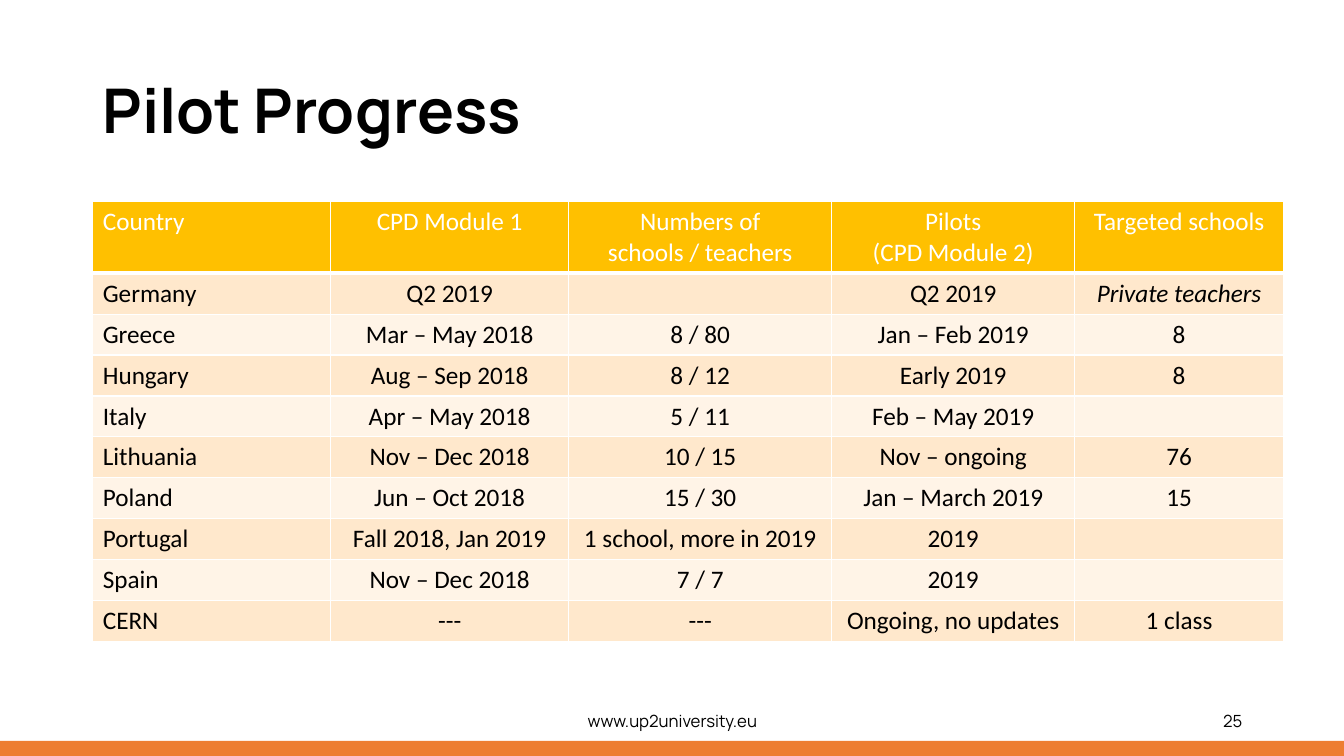
import pptx
import pptx.util
import pptx.dml.color
import pptx.enum.shapes
import pptx.enum.text
import pptx.oxml

Inch, Pt = pptx.util.Inches, pptx.util.Pt
Color = pptx.dml.color.RGBColor.from_string
Align, Anchor = pptx.enum.text.PP_ALIGN, pptx.enum.text.MSO_ANCHOR

theme = dict(
    ink="000000", white="FFFFFF", bar="ED7D31", head="FFC000",
    bands=("FFE8CC", "FFF4E7"),
    brand="Manrope", plain="Calibri",
    title=44, body=18, foot=12, rule=1, thick=3,
)
wide, high = 13.33, 7.5
left = 0.92


def write(frame, text, font=theme["brand"], size=theme["foot"], color=theme["ink"],
          bold=False, slant=False, align=Align.LEFT, anchor=Anchor.MIDDLE, space=None):
    frame.word_wrap = True
    frame.vertical_anchor = anchor
    line = frame.paragraphs[0]
    line.text = text
    line.alignment = align
    line.line_spacing = space
    for run in line.runs:
        run.font.name, run.font.size = font, Pt(size)
        run.font.bold, run.font.italic = bold, slant
        run.font.color.rgb = Color(color)


def edge(cell, side, width):
    cell._tc.get_or_add_tcPr().append(pptx.oxml.parse_xml(
        f'<a:ln{side} xmlns:a="http://schemas.openxmlformats.org/drawingml/2006/main"'
        f' w="{Pt(width)}"><a:solidFill><a:srgbClr val="{theme["white"]}"/>'
        f'</a:solidFill></a:ln{side}>'))


deck = pptx.Presentation()
deck.slide_width, deck.slide_height = Inch(wide), Inch(high)
slide = deck.slides.add_slide(deck.slide_layouts[5])

# Bottom bar, 2% of the height
bar = slide.shapes.add_shape(
    pptx.enum.shapes.MSO_SHAPE.RECTANGLE,
    0, Inch(high * 0.98), Inch(wide), Inch(high * 0.02))
bar.shadow.inherit = False
bar.fill.solid()
bar.fill.fore_color.rgb = Color(theme["bar"])
bar.line.fill.background()

# Title
title = slide.shapes.title
title.left, title.top = Inch(left), Inch(0.4)
title.width, title.height = Inch(10.08), Inch(1.45)
write(title.text_frame, "Pilot Progress", size=theme["title"], bold=True, space=0.9)

# Pilot table
rows = [
    ("Country", "CPD Module 1", "Numbers of\nschools / teachers",
     "Pilots\n(CPD Module 2)", "Targeted schools"),
    ("Germany", "Q2 2019", "", "Q2 2019", "Private teachers"),
    ("Greece", "Mar – May 2018", "8 / 80", "Jan – Feb 2019", "8"),
    ("Hungary", "Aug – Sep 2018", "8 / 12", "Early 2019", "8"),
    ("Italy", "Apr – May 2018", "5 / 11", "Feb – May 2019", ""),
    ("Lithuania", "Nov – Dec 2018", "10 / 15", "Nov – ongoing", "76"),
    ("Poland", "Jun – Oct 2018", "15 / 30", "Jan – March 2019", "15"),
    ("Portugal", "Fall 2018, Jan 2019", "1 school, more in 2019", "2019", ""),
    ("Spain", "Nov – Dec 2018", "7 / 7", "2019", ""),
    ("CERN", "---", "---", "Ongoing, no updates", "1 class"),
]
cols = (2.36, 2.36, 2.61, 2.41, 2.07)
top, tall, step = 2, 0.7, 0.406
grid = slide.shapes.add_table(
    len(rows), len(cols), Inch(left), Inch(top),
    Inch(sum(cols)), Inch(tall + step * (len(rows) - 1))).table
for c, width in enumerate(cols):
    grid.columns[c].width = Inch(width)
for r, row in enumerate(rows):
    head = r == 0
    grid.rows[r].height = Inch(tall if head else step)
    for c, text in enumerate(row):
        cell = grid.cell(r, c)
        for side in "LRTB":
            edge(cell, side, theme["thick" if head and side == "B" else "rule"])
        cell.fill.solid()
        cell.fill.fore_color.rgb = Color(theme["head"] if head else theme["bands"][(r - 1) % 2])
        write(cell.text_frame, text, font=theme["plain"], size=theme["body"],
              color=theme["white" if head else "ink"],
              slant=text == "Private teachers",
              align=Align.CENTER if c else Align.LEFT, anchor=Anchor.TOP)

# Footer: web address and page number
for text, x, width, align in (
    ("www.up2university.eu", 4.42, 4.5, Align.CENTER),
    ("25", 9.42, 3, Align.RIGHT),
):
    box = slide.shapes.add_textbox(Inch(x), Inch(6.95), Inch(width), Inch(0.4))
    write(box.text_frame, text, align=align)

deck.save("out.pptx")
